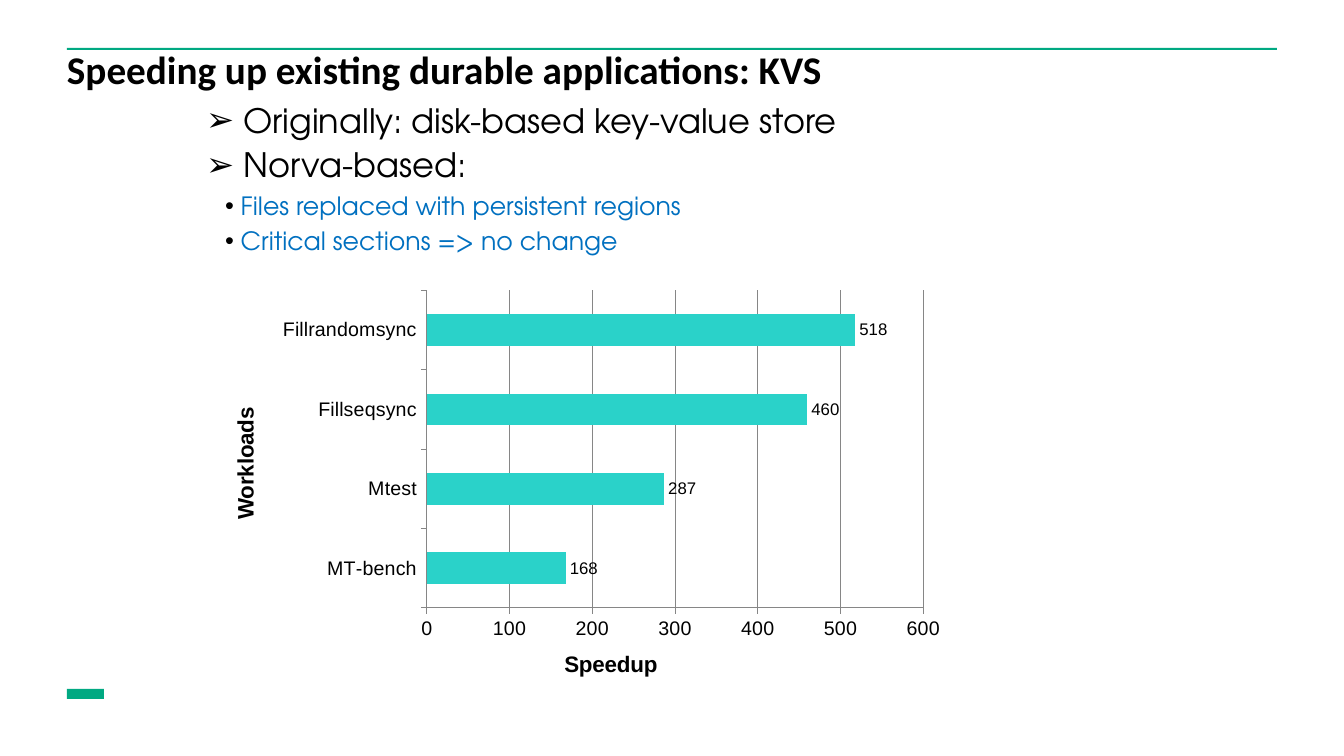
from lxml import etree
from pptx import Presentation
from pptx.chart.data import CategoryChartData
from pptx.dml.color import RGBColor
from pptx.enum.chart import XL_CHART_TYPE, XL_LABEL_POSITION, XL_TICK_MARK
from pptx.enum.shapes import MSO_SHAPE
from pptx.enum.text import MSO_ANCHOR
from pptx.oxml import parse_xml
from pptx.oxml.ns import nsdecls, qn
from pptx.util import Pt

PX = 914400 / 100.8
BLACK = RGBColor(0x00, 0x00, 0x00)
GREEN = RGBColor(0x01, 0xA9, 0x82)
BLUE = RGBColor(0x00, 0x70, 0xC0)
TURQUOISE = RGBColor(0x2A, 0xD2, 0xC9)
GRID_GRAY = RGBColor(0x86, 0x86, 0x86)


def box(*lengths):
    """Turn px lengths into whole EMU."""
    return [round(length * PX) for length in lengths]


def set_layout(parent, index, **fractions):
    """Place a chart part by fractions of the chart's width and height."""
    for old in parent.findall(qn("c:layout")):
        parent.remove(old)
    layout = parse_xml(f"<c:layout {nsdecls('c')}><c:manualLayout/></c:layout>")
    manual = layout[0]
    if "w" in fractions:
        etree.SubElement(manual, qn("c:layoutTarget")).set("val", "inner")
    for mode in ("xMode", "yMode"):
        etree.SubElement(manual, qn(f"c:{mode}")).set("val", "edge")
    for key, fraction in fractions.items():
        etree.SubElement(manual, qn(f"c:{key}")).set("val", str(fraction))
    parent.insert(index, layout)


prs = Presentation()
prs.slide_width, prs.slide_height = box(1344, 756)
slide = prs.slides.add_slide(prs.slide_layouts[6])

# Top rule and a plain block in the footer
for bounds in ((67, 48, 1210, 2), (67, 689, 37, 10)):
    bar = slide.shapes.add_shape(MSO_SHAPE.RECTANGLE, *box(*bounds))
    bar.shadow.inherit = False
    bar.fill.solid()
    bar.fill.fore_color.rgb = GREEN
    bar.line.fill.background()

# Title and bullets: text, size, font, colour, bold, bullet, indent
title = [("Speeding up existing durable applications: KVS",
          28, "Calibri", BLACK, True, None, 0)]
points = [
    (" Originally: disk-based key-value store", 24, "TeX Gyre Adventor", BLACK, False, "➢", 0),
    (" Norva-based:", 24, "TeX Gyre Adventor", BLACK, False, "➢", 0),
    (" Files replaced with persistent regions", 18, "TeX Gyre Adventor", BLUE, False, "•", 19),
    (" Critical sections => no change", 18, "TeX Gyre Adventor", BLUE, False, "•", 19),
]
for bounds, lines in (((67, 51, 1254, 63), title), ((206, 104, 902, 166), points)):
    frame = slide.shapes.add_textbox(*box(*bounds)).text_frame
    frame.word_wrap = True
    frame.vertical_anchor = MSO_ANCHOR.TOP
    frame.margin_left = frame.margin_top = frame.margin_right = frame.margin_bottom = 0
    frame.text = "\n".join(line[0] for line in lines)
    for paragraph, (_, size, face, color, bold, bullet, indent) in zip(frame.paragraphs, lines):
        paragraph.line_spacing = 0.9
        font = paragraph.runs[0].font
        font.size, font.name, font.bold = Pt(size), face, bold
        font.color.rgb = color
        if bullet:
            paragraph.space_before = Pt(6)
            pPr = paragraph._p.get_or_add_pPr()
            pPr.set("marL", str(round(indent * PX)))
            pPr.set("indent", "0")
            bullet_color = etree.SubElement(pPr, qn("a:buClr"))
            etree.SubElement(bullet_color, qn("a:srgbClr")).set("val", str(BLACK))
            etree.SubElement(pPr, qn("a:buFont")).set("typeface", "Arial")
            etree.SubElement(pPr, qn("a:buChar")).set("char", bullet)

# Speedup per workload
speedups = CategoryChartData()
speedups.categories = ["MT-bench", "Mtest", "Fillseqsync", "Fillrandomsync"]
speedups.add_series("Series 1", (168, 287, 460, 518))
chart = slide.shapes.add_chart(
    XL_CHART_TYPE.BAR_CLUSTERED, *box(212, 282, 741, 418), speedups).chart
chart.has_title = False
chart.has_legend = False
chart.font.name = "Arial"
chart.font.size = Pt(10)
chart.font.color.rgb = BLACK
set_layout(chart._chartSpace.chart.plotArea, 0, x=0.29, y=0.02, w=0.67, h=0.76)

plot = chart.plots[0]
plot.gap_width = 150
plot.vary_by_categories = False
fill = plot.series[0].format.fill
fill.solid()
fill.fore_color.rgb = TURQUOISE
plot.has_data_labels = True
labels = plot.data_labels
labels.show_value = True
labels.position = XL_LABEL_POSITION.OUTSIDE_END
labels.font.size = Pt(12)

for axis, caption, rotation, x, y in (
    (chart.category_axis, "Workloads", -5400000, 0.02, 0.29),
    (chart.value_axis, "Speedup", 0, 0.47, 0.87),
):
    axis.tick_labels.font.size = Pt(14)
    axis.major_tick_mark = XL_TICK_MARK.OUTSIDE
    axis.minor_tick_mark = XL_TICK_MARK.NONE
    axis.format.line.color.rgb = GRID_GRAY
    axis.format.line.width = Pt(0.75)
    caption_frame = axis.axis_title.text_frame
    caption_frame.text = caption
    caption_frame._txBody.bodyPr.set("rot", str(rotation))
    caption_font = caption_frame.paragraphs[0].runs[0].font
    caption_font.size, caption_font.bold, caption_font.name = Pt(16), True, "Arial"
    caption_font.color.rgb = BLACK
    set_layout(axis.axis_title._element, 1, x=x, y=y)

chart.category_axis.has_major_gridlines = False
speedup_axis = chart.value_axis
speedup_axis.minimum_scale, speedup_axis.maximum_scale = 0, 600
speedup_axis.major_unit = 100
speedup_axis.has_major_gridlines = True
speedup_axis.major_gridlines.format.line.color.rgb = GRID_GRAY
speedup_axis.major_gridlines.format.line.width = Pt(0.75)

prs.save("out.pptx")
